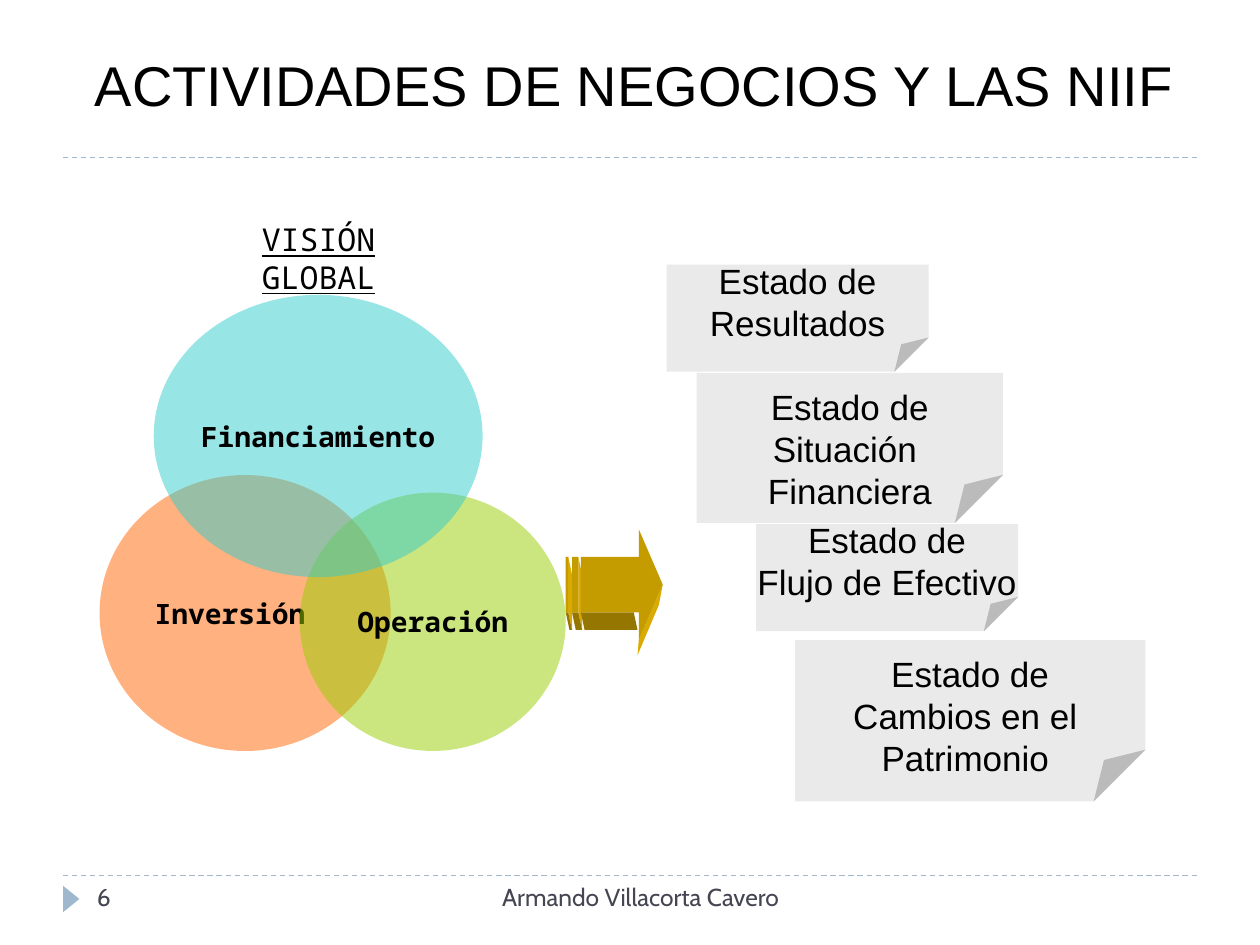
from lxml import etree
from pptx import Presentation
from pptx.dml.color import RGBColor
from pptx.enum.dml import MSO_LINE
from pptx.enum.shapes import MSO_CONNECTOR, MSO_SHAPE
from pptx.enum.text import MSO_ANCHOR, PP_ALIGN
from pptx.oxml.ns import qn
from pptx.util import Inches, Pt

BLACK = RGBColor(0x00, 0x00, 0x00)
SLATE = RGBColor(0x46, 0x46, 0x53)
STEEL = RGBColor(0x9F, 0xB8, 0xCD)
ORANGE = RGBColor(0xFF, 0x66, 0x00)
LIME = RGBColor(0x99, 0xCC, 0x00)
TEAL = RGBColor(0x33, 0xCC, 0xCC)
PAPER = RGBColor(0xEA, 0xEA, 0xEA)
GOLD = RGBColor(0xC4, 0x9C, 0x00)
DARK_GOLD = RGBColor(0x95, 0x76, 0x00)
LIGHT_GOLD = RGBColor(0xDA, 0xAA, 0x00)

SANS, MONO, FOOTER_FONT = "Arial", "Noto Sans Mono", "Cabin"


def write_text(shape, text, font_name, size, color=BLACK, align=PP_ALIGN.CENTER,
               anchor=MSO_ANCHOR.MIDDLE, wrap=True, bold=False, underline=False):
    frame = shape.text_frame
    frame.text = text
    frame.word_wrap = wrap
    frame.vertical_anchor = anchor
    for paragraph in frame.paragraphs:
        paragraph.alignment = align
        for run in paragraph.runs:
            font = run.font
            font.name, font.size = font_name, Pt(size)
            font.bold, font.underline = bold, underline
            font.color.rgb = color


def add_text(slide, box, text, font_name, size, **style):
    shape = slide.shapes.add_textbox(*map(Inches, box))
    write_text(shape, text, font_name, size, anchor=MSO_ANCHOR.TOP, **style)


def paint(shape, color):
    shape.shadow.inherit = False
    shape.fill.solid()
    shape.fill.fore_color.rgb = color
    shape.line.fill.background()


def add_filled(slide, preset, box, color):
    shape = slide.shapes.add_shape(preset, *map(Inches, box))
    paint(shape, color)
    return shape


def add_rule(slide, y):
    rule = slide.shapes.add_connector(
        MSO_CONNECTOR.STRAIGHT, Inches(0.5), Inches(y), Inches(9.5), Inches(y))
    rule.line.color.rgb = STEEL
    rule.line.width = Pt(0.75)
    rule.line.dash_style = MSO_LINE.DASH
    etree.SubElement(rule._element.spPr, qn("a:effectLst"))


def add_circle(slide, box, color, label, **style):
    circle = add_filled(slide, MSO_SHAPE.OVAL, box, color)
    color_element = circle._element.spPr.find(qn("a:solidFill"))[0]
    etree.SubElement(color_element, qn("a:alpha"), val="50000")
    write_text(circle, label, MONO, 16, bold=True, **style)


def add_note(slide, box, text):
    note = add_filled(slide, MSO_SHAPE.FOLDED_CORNER, box, PAPER)
    # Size of the folded corner
    geometry = note._element.spPr.find(qn("a:prstGeom"))
    etree.SubElement(geometry.find(qn("a:avLst")), qn("a:gd"),
                     name="adj", fmla="val 32000")
    # Three-line notes start at the top edge
    tall = text.count("\n") == 2
    write_text(note, text, SANS, 20, wrap=False,
               anchor=MSO_ANCHOR.TOP if tall else MSO_ANCHOR.MIDDLE)
    if tall:
        note.text_frame.margin_top = Inches(0.1)


def add_outline(slide, contours, color):
    contours = [[(Inches(x), Inches(y)) for x, y in points] for points in contours]
    builder = slide.shapes.build_freeform(*contours[0][0])
    for index, points in enumerate(contours):
        if index:
            builder.move_to(*points[0])
        builder.add_line_segments(points[1:], close=True)
    paint(builder.convert_to_shape(), color)


def add_striped_arrow(slide):
    top, bottom, depth = 4.42, 4.86, 0.14
    stripes = [(4.49, 4.51), (4.54, 4.59)]

    # Light right-hand sides of the stripes and of the head
    sides = [[(right, top), (right + 0.03, top + depth),
              (right + 0.03, bottom + depth), (right, bottom)]
             for _, right in stripes]
    sides.append([(5.07, 5.08), (5.26, 4.64), (5.23, 4.8), (5.06, 5.2)])
    add_outline(slide, sides, LIGHT_GOLD)

    # Dark undersides
    add_outline(slide, [
        [(left, bottom), (right, bottom),
         (right + 0.03, bottom + depth), (left + 0.03, bottom + depth)]
        for left, right in stripes + [(4.61, 5.03)]], DARK_GOLD)

    # Front face
    head = [(5.07, 4.2), (5.07, top), (4.61, top), (4.61, bottom),
            (5.07, bottom), (5.07, 5.08), (5.26, 4.64)]
    bars = [[(left, top), (left, bottom), (right, bottom), (right, top)]
            for left, right in stripes]
    add_outline(slide, [head] + bars, GOLD)


def main():
    presentation = Presentation()
    presentation.slide_width, presentation.slide_height = Inches(10), Inches(7.5)
    slide = presentation.slides.add_slide(presentation.slide_layouts[6])

    # Frame and title
    add_rule(slide, 6.95)
    add_rule(slide, 1.25)
    marker = add_filled(slide, MSO_SHAPE.ISOSCELES_TRIANGLE,
                        (0.46, 7.07, 0.21, 0.13), STEEL)
    marker.rotation = 90
    add_text(slide, (0.43, 0.35, 9.21, 0.64),
             "ACTIVIDADES DE NEGOCIOS Y LAS NIIF", SANS, 32)

    # Business activities
    add_circle(slide, (0.79, 3.77, 2.31, 2.19), ORANGE, "Inversión",
               align=PP_ALIGN.LEFT)
    add_circle(slide, (2.38, 3.91, 2.11, 2.05), LIME, "Operación", wrap=False)
    add_circle(slide, (1.22, 2.34, 2.61, 2.24), TEAL, "Financiamiento", wrap=False)
    add_text(slide, (1.98, 1.7, 2.06, 0.4), "VISIÓN GLOBAL", MONO, 18,
             align=PP_ALIGN.LEFT, underline=True)

    add_striped_arrow(slide)

    # Financial statements
    add_note(slide, (5.29, 2.1, 2.08, 0.85), "Estado de\nResultados")
    add_note(slide, (5.53, 2.96, 2.43, 1.19), "Estado de\nSituación \nFinanciera")
    add_note(slide, (6, 4.16, 2.08, 0.85), "Estado de\nFlujo de Efectivo")
    add_note(slide, (6.31, 5.08, 2.78, 1.28),
             "Estado de\nCambios en el \nPatrimonio ")

    # Footer
    add_text(slide, (3.17, 6.95, 3.83, 0.4), "Armando Villacorta Cavero",
             FOOTER_FONT, 14, color=SLATE)
    add_text(slide, (0.67, 6.95, 2.17, 0.4), "6", FOOTER_FONT, 14,
             color=SLATE, align=PP_ALIGN.LEFT)

    presentation.save("out.pptx")


if __name__ == "__main__":
    main()
